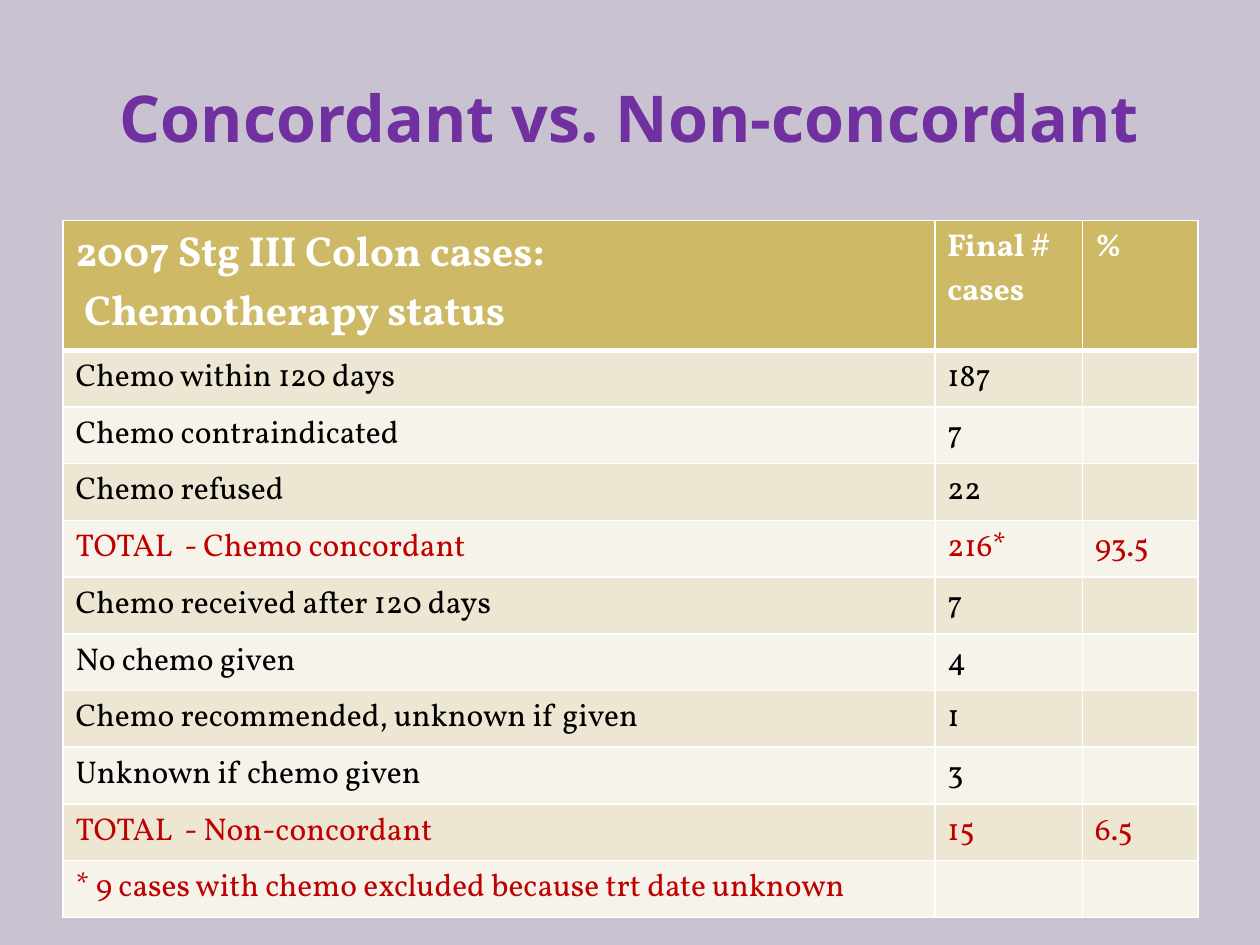
import pptx
import pptx.dml.color
import pptx.enum.text
import pptx.oxml
import pptx.oxml.ns
import pptx.util
from pptx.util import Inches

TITLE = "Concordant vs. Non-concordant"
HEADER = ("2007 Stg III Colon cases:\n Chemotherapy status", "Final # cases", "%")
ROWS = [
    ("Chemo within 120 days", "187", ""),
    ("Chemo contraindicated", "7", ""),
    ("Chemo refused", "22", ""),
    ("TOTAL  - Chemo concordant", "216*", "93.5"),
    ("Chemo received after 120 days", "7", ""),
    ("No chemo given", "4", ""),
    ("Chemo recommended, unknown if given", "1", ""),
    ("Unknown if chemo given", "3", ""),
    ("TOTAL  - Non-concordant", "15", "6.5"),
    ("* 9 cases with chemo excluded because trt date unknown", "", ""),
]
COLUMN_WIDTHS = (6.92, 1.17, 0.92)
HEADER_HEIGHT, ROW_HEIGHT = 1.03, 0.45

THEME = {
    "background": "C9C2D1", "title": "7030A0", "header": "CEB966",
    "bands": ("EDE6D3", "F6F3EA"), "light": "FFFFFF", "dark": "000000",
    "accent": "C00000", "title_font": "Open Sans", "body_font": "Vollkorn",
    "title_size": 36.9, "heading_size": 24, "body_size": 18,
}


def rgb(value):
    return pptx.dml.color.RGBColor.from_string(value)


def write_text(text_frame, text, *, color, size=THEME["body_size"],
               font=THEME["body_font"], bold=False, align=None):
    """Write one paragraph for each line of text."""
    for index, line in enumerate(text.split("\n")):
        paragraph = text_frame.add_paragraph() if index else text_frame.paragraphs[0]
        paragraph.alignment = align
        target = paragraph
        if line:
            target = paragraph.add_run()
            target.text = line
        target.font.size = pptx.util.Pt(size)
        target.font.name = font
        target.font.bold = bold
        target.font.color.rgb = rgb(color)


def style_cell(cell, fill, bottom_width=1):
    """Set the borders, then the fill, in the order the schema asks for."""
    properties = cell._tc.get_or_add_tcPr()
    for side, width in (("L", 1), ("R", 1), ("T", 1), ("B", bottom_width)):
        properties.append(pptx.oxml.parse_xml(
            f'<a:ln{side} {pptx.oxml.ns.nsdecls("a")} w="{pptx.util.Pt(width)}">'
            f'<a:solidFill><a:srgbClr val="{THEME["light"]}"/></a:solidFill></a:ln{side}>'))
    cell.fill.solid()
    cell.fill.fore_color.rgb = rgb(fill)


def add_title(slide):
    box = slide.shapes.add_textbox(Inches(0.5), Inches(0.3), Inches(9), Inches(1.25))
    box.text_frame.word_wrap = True
    box.text_frame.vertical_anchor = pptx.enum.text.MSO_ANCHOR.MIDDLE
    write_text(box.text_frame, TITLE, color=THEME["title"], size=THEME["title_size"],
               font=THEME["title_font"], bold=True, align=pptx.enum.text.PP_ALIGN.CENTER)


def add_status_table(slide):
    height = HEADER_HEIGHT + ROW_HEIGHT * len(ROWS)
    table = slide.shapes.add_table(len(ROWS) + 1, len(HEADER), Inches(0.5), Inches(1.75),
                                   Inches(sum(COLUMN_WIDTHS)), Inches(height)).table
    for column, width in zip(table.columns, COLUMN_WIDTHS):
        column.width = Inches(width)
    for row in table.rows:
        row.height = Inches(ROW_HEIGHT)
    table.rows[0].height = Inches(HEADER_HEIGHT)

    for column, text in enumerate(HEADER):
        cell = table.cell(0, column)
        size = THEME["body_size"] if column else THEME["heading_size"]
        write_text(cell.text_frame, text, color=THEME["light"], size=size, bold=True)
        style_cell(cell, THEME["header"], bottom_width=3)

    for index, values in enumerate(ROWS):
        highlighted = values[0].startswith(("TOTAL", "*"))
        for column, text in enumerate(values):
            cell = table.cell(index + 1, column)
            write_text(cell.text_frame, text,
                       color=THEME["accent" if highlighted else "dark"])
            style_cell(cell, THEME["bands"][index % 2],)
            if index == 0:
                top = cell._tc.tcPr.find(pptx.oxml.ns.qn("a:lnT"))
                top.set("w", str(pptx.util.Pt(3)))


def main():
    presentation = pptx.Presentation()
    presentation.slide_width, presentation.slide_height = Inches(10), Inches(7.5)
    slide = presentation.slides.add_slide(presentation.slide_layouts[6])
    slide.background.fill.solid()
    slide.background.fill.fore_color.rgb = rgb(THEME["background"])
    add_title(slide)
    add_status_table(slide)
    presentation.save("out.pptx")


if __name__ == "__main__":
    main()
